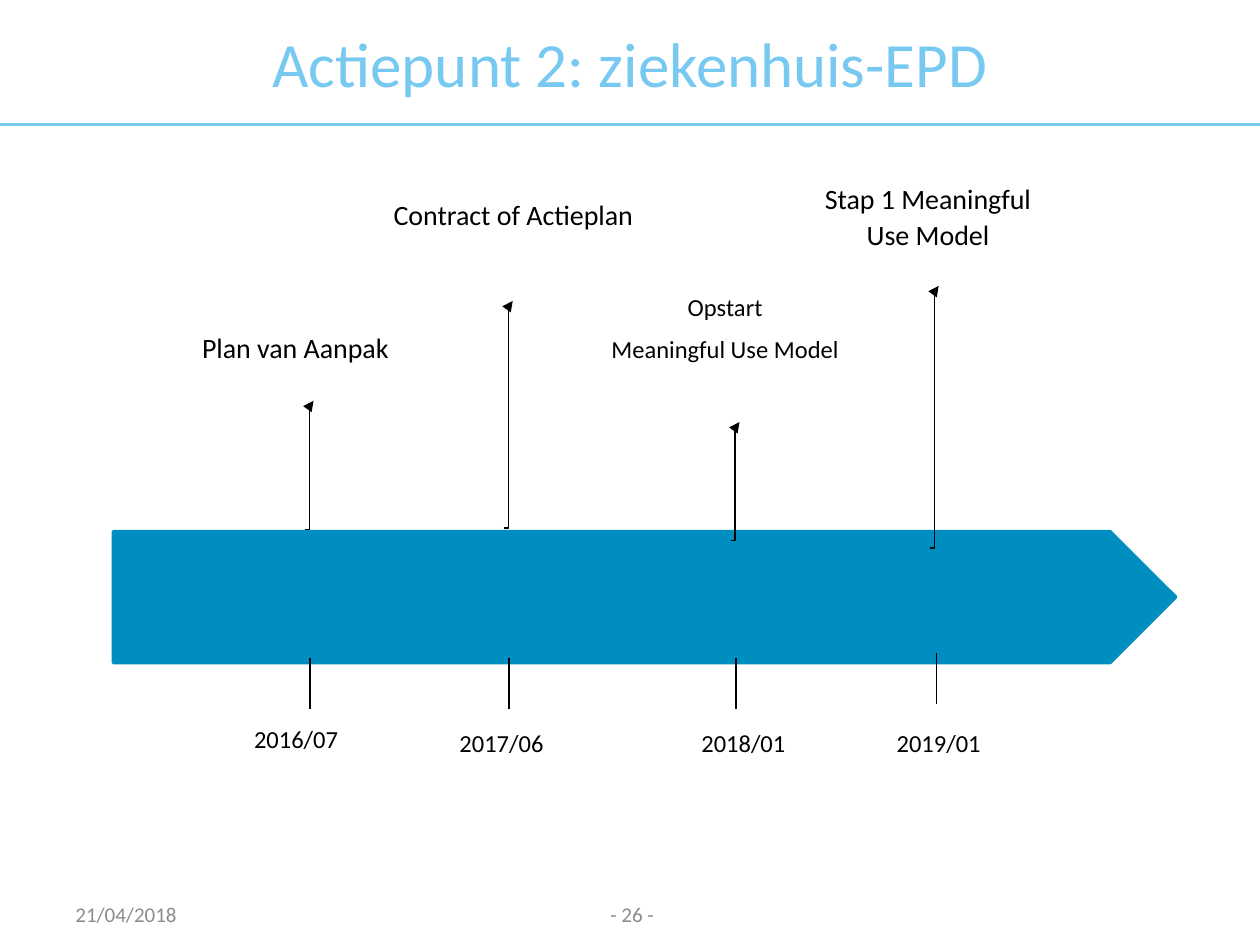
"""Build a hospital record timeline slide with four milestones."""
from dataclasses import dataclass
from typing import Any

from lxml import etree
from pptx import Presentation
from pptx import util as u
from pptx.dml.color import RGBColor
from pptx.enum import shapes, text
from pptx.oxml.ns import qn


@dataclass(frozen=True)
class Theme:
    """Colours, font and type sizes."""
    sky: str = "77C9F2"
    blue: str = "008EC0"
    ink: str = "000000"
    grey: str = "8C8C8C"
    font: str = "Calibri"
    title: float = 36
    label: float = 16
    date: float = 14
    foot: float = 12


@dataclass(frozen=True)
class Box:
    """A rectangle in points."""
    left: float
    top: float
    width: float
    height: float

    def pts(self) -> list[u.Pt]:
        """Return the four lengths as slide units."""
        return [u.Pt(v) for v in (self.left, self.top, self.width, self.height)]


@dataclass(frozen=True)
class Step:
    """A milestone with its label, arrow, tick and date."""
    lines: tuple[str, ...]
    size: float
    wrap: bool
    label: Box
    stem: float
    base: float
    tip: float
    tick: float
    foot: float
    date: str
    slot: Box


THEME = Theme()
MID = text.PP_ALIGN.CENTER
LEAN = 5
TICK = 29.5
STEPS = (
    Step(("Plan van Aanpak",), THEME.label, False, Box(102.2, 184.3, 133.2, 45.4),
         174.2, 302.4, 229, 177.1, 375.8, "2016/07", Box(130.3, 409.7, 77.8, 44.6)),
    Step(("Contract of Actieplan",), THEME.label, True, Box(217.4, 108.7, 151.9, 38.9),
         288, 301.7, 172, 290.9, 375.8, "2017/06", Box(247.7, 411.8, 77.8, 45.4)),
    Step(("Opstart", "Meaningful Use Model"), THEME.date, True, Box(338.4, 162.7, 151.9, 92.2),
         417.6, 308.9, 241.2, 420.5, 375.8, "2018/01", Box(385.9, 411.8, 77.8, 45.4)),
    Step(("Stap 1 Meaningful Use Model",), THEME.label, True, Box(454.3, 99.4, 151.9, 77.8),
         531.4, 313.2, 163.4, 535, 373, "2019/01", Box(497.5, 411.8, 77.8, 45.4)),
)


def apply(obj: Any, form: dict[str, Any]) -> None:
    """Set each named value on an object."""
    for name, value in form.items():
        setattr(obj, name, value)


def write(shape: Any, lines: tuple[str, ...], size: float, hue: str,
          para: dict[str, Any], frame: dict[str, Any]) -> None:
    """Fill a shape with formatted paragraphs."""
    body = shape.text_frame
    apply(body, frame)
    body.text = "\n".join(lines)
    for item in body.paragraphs:
        apply(item, para)
        for run in item.runs:
            apply(run.font, {"name": THEME.font, "size": u.Pt(size)})
            run.font.color.rgb = RGBColor.from_string(hue)


def note(slide: Any, box: Box, lines: tuple[str, ...], size: float, wrap: bool) -> None:
    """Add a centred timeline text."""
    write(slide.shapes.add_textbox(*box.pts()), lines, size, THEME.ink,
          {"alignment": MID, "line_spacing": 1.07, "space_after": u.Pt(6)},
          {"word_wrap": wrap, "margin_left": u.Pt(5), "margin_right": u.Pt(5),
           "margin_top": u.Pt(3), "margin_bottom": u.Pt(3)})


def foot(slide: Any, box: Box, line: str, side: Any) -> None:
    """Add a grey footer text."""
    write(slide.shapes.add_textbox(*box.pts()), (line,), THEME.foot, THEME.grey,
          {"alignment": side},
          {"word_wrap": True, "vertical_anchor": text.MSO_ANCHOR.MIDDLE})


def link(slide: Any, start: tuple[float, float], end: tuple[float, float],
         hue: str = THEME.ink, width: float = 0.75, bent: bool = False) -> None:
    """Add a straight line, or a bent arrow."""
    kind = shapes.MSO_CONNECTOR.ELBOW if bent else shapes.MSO_CONNECTOR.STRAIGHT
    line = slide.shapes.add_connector(kind, *(u.Pt(v) for v in start + end))
    line.line.color.rgb = RGBColor.from_string(hue)
    line.line.width = u.Pt(width)
    if bent:
        etree.SubElement(line.line._get_or_add_ln(), qn("a:tailEnd"), type="triangle")
    etree.SubElement(line._element.spPr, qn("a:effectLst"))


def band(slide: Any) -> None:
    """Add the timeline arrow."""
    shape = slide.shapes.add_shape(shapes.MSO_SHAPE.PENTAGON, *Box(64.8, 303.8, 607, 74.9).pts())
    shape.shadow.inherit = False
    shape.fill.solid()
    shape.fill.fore_color.rgb = RGBColor.from_string(THEME.blue)
    shape.line.color.rgb = RGBColor.from_string(THEME.blue)
    shape.line.width = u.Pt(2)


def mark(slide: Any, step: Step) -> None:
    """Draw one milestone."""
    link(slide, (step.stem, step.base), (step.stem + LEAN, step.tip), bent=True)
    link(slide, (step.tick, step.foot), (step.tick, step.foot + TICK))
    note(slide, step.slot, (step.date,), THEME.date, False)
    note(slide, step.label, step.lines, step.size, step.wrap)


def main() -> None:
    """Build and save the slide."""
    deck = Presentation()
    apply(deck, {"slide_width": u.Pt(720), "slide_height": u.Pt(540)})
    slide = deck.slides.add_slide(deck.slide_layouts[5])
    link(slide, (0, 71.3), (720, 71.3), THEME.sky, 1.5)
    title = slide.shapes.title
    apply(title, dict(zip(("left", "top", "width", "height"), Box(0, 0, 720, 71.3).pts())))
    write(title, ("Actiepunt 2: ziekenhuis-EPD",), THEME.title, THEME.sky,
          {"alignment": MID},
          {"vertical_anchor": text.MSO_ANCHOR.MIDDLE, "auto_size": text.MSO_AUTO_SIZE.NONE})
    band(slide)
    for step in STEPS:
        mark(slide, step)
    foot(slide, Box(36, 508, 168, 28.8), "21/04/2018", text.PP_ALIGN.LEFT)
    foot(slide, Box(277.2, 508, 168, 28.8), "- 26 -", MID)
    deck.save("out.pptx")


if __name__ == "__main__":
    main()
